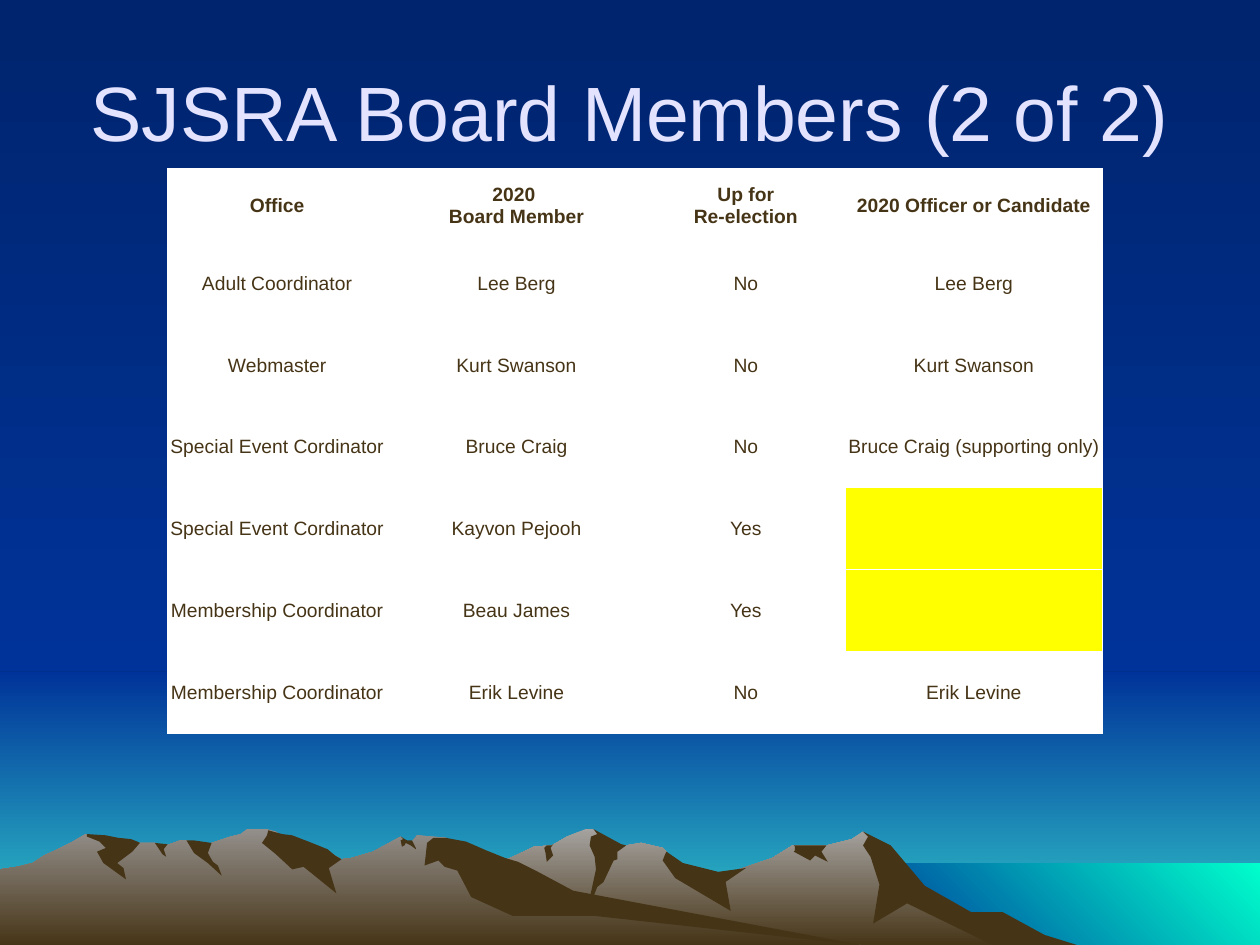
from copy import deepcopy

from lxml.etree import SubElement
from pptx import Presentation
from pptx.dml.color import RGBColor
from pptx.enum.shapes import MSO_SHAPE as Preset
from pptx.enum.text import MSO_ANCHOR as Anchor, PP_ALIGN as Align
from pptx.oxml.ns import qn
from pptx.util import Pt

PX = 9144
WIDTH, HEIGHT = 1000, 750
FONT = "Arial"
NAVY, BLUE, ROCK = "00246D", "003399", "463416"
WHITE, YELLOW, LAVENDER = "FFFFFF", "FFFF00", "E3E3FF"

TITLE = "SJSRA Board Members (2 of 2)"
TITLE_BOX = (50, 25, 900, 125)
TABLE_LEFT, TABLE_TOP = 133, 134
COLUMN_WIDTHS = (174, 206, 158, 204)
HEADER_HEIGHT, ROW_HEIGHT = 58, 65
ROWS = [
    ("Office", "2020 \nBoard Member", "Up for\nRe-election", "2020 Officer or Candidate"),
    ("Adult Coordinator", "Lee Berg", "No", "Lee Berg"),
    ("Webmaster", "Kurt Swanson", "No", "Kurt Swanson"),
    ("Special Event Cordinator", "Bruce Craig", "No", "Bruce Craig (supporting only)"),
    ("Special Event Cordinator", "Kayvon Pejooh", "Yes", ""),
    ("Membership Coordinator", "Beau James", "Yes", ""),
    ("Membership Coordinator", "Erik Levine", "No", "Erik Levine"),
]

BANDS = [
    ((0, 533, 1000, 217), (BLUE, "33CCCC"), 90),
    ((0, 0, 1000, 533), (NAVY, BLUE), 90),
    ((683, 685, 317, 65), (BLUE, "00FFCC"), 315),
]

RIGHT_RANGE = [
    (802, 740), (778, 727), (764, 723), (723, 698), (702, 671), (685, 660), (676, 666),
    (656, 671), (629, 671), (613, 681), (566, 697), (536, 690), (529, 676), (526, 673),
    (509, 669), (497, 671), (486, 673), (474, 661), (471, 658), (465, 658), (450, 664),
    (438, 671), (424, 672), (405, 681), (394, 685), (355, 698), (327, 709), (277, 739),
    (258, 751), (821, 751),
]
RIGHT_SHADOWS = [
    [(796, 724), (771, 724), (734, 703), (707, 671), (685, 660), (689, 664), (685, 671),
     (691, 680), (698, 702), (693, 733), (720, 717), (792, 752), (858, 751), (829, 742)],
    [(471, 658), (474, 662), (469, 664), (468, 671), (472, 680), (473, 690), (465, 727),
     (474, 704), (479, 700), (487, 683), (490, 682), (490, 676), (497, 671), (493, 670)],
    [(529, 676), (528, 678), (526, 683), (536, 697), (580, 723), (576, 700), (592, 689),
     (570, 692), (542, 685)],
    [(650, 671), (630, 671), (631, 672), (631, 675), (630, 676), (643, 683), (647, 679),
     (657, 684), (652, 676), (656, 671)],
    [(433, 677), (432, 673), (434, 671), (438, 671), (439, 670), (437, 673), (439, 679),
     (434, 684)],
]
LEFT_RANGE = [
    (690, 751), (667, 748), (432, 712), (354, 665), (331, 663), (327, 668), (323, 668),
    (318, 664), (296, 676), (279, 681), (271, 682), (260, 676), (236, 681), (223, 663),
    (219, 660), (212, 658), (196, 658), (191, 662), (183, 664), (168, 669), (160, 671),
    (148, 667), (143, 667), (132, 671), (128, 671), (123, 669), (111, 669), (94, 671),
    (68, 662), (56, 669), (46, 674), (35, 679), (26, 685), (14, 688), (0, 690), (0, 751),
]
LEFT_SHADOWS = [
    [(212, 663), (208, 669), (219, 678), (232, 690), (241, 688), (267, 709), (261, 689),
     (271, 682), (266, 679), (260, 674), (245, 668), (232, 663), (224, 662), (213, 659)],
    [(370, 668), (354, 665), (344, 665), (339, 669), (337, 687), (348, 683), (353, 688),
     (363, 691), (374, 712), (407, 727), (472, 727), (690, 751), (683, 750), (455, 707),
     (427, 692), (411, 684), (401, 681), (386, 675)],
    [(318, 667), (320, 666), (318, 664), (323, 667), (327, 667), (330, 673), (330, 674),
     (326, 671), (322, 669), (321, 671), (319, 672)],
    [(154, 667), (168, 669), (165, 677), (169, 684), (173, 687), (176, 695), (165, 685),
     (154, 677), (148, 667)],
    [(133, 670), (130, 674), (132, 680), (129, 678), (123, 669)],
    [(109, 668), (111, 669), (105, 676), (93, 685), (98, 689), (100, 698), (82, 685),
     (77, 676), (84, 673), (79, 668), (69, 664), (69, 662), (84, 663), (94, 665),
     (104, 666)],
]
RANGES = [
    (RIGHT_RANGE, "A5A29F", RIGHT_SHADOWS),
    (LEFT_RANGE, "938F8B", LEFT_SHADOWS),
]


def color(value):
    return RGBColor.from_string(value)


def set_solid(fill, value):
    fill.solid()
    fill.fore_color.rgb = color(value)


def set_gradient(fill, colors, angle):
    fill.gradient()
    fill.gradient_angle = 360 - angle
    for stop, value in zip(fill.gradient_stops, colors):
        stop.color.rgb = color(value)


def place(shape, box):
    shape.left, shape.top, shape.width, shape.height = (value * PX for value in box)


def write(paragraph, text, size, value, bold=False):
    paragraph.text = text
    paragraph.alignment = Align.CENTER
    for run in paragraph.runs:
        font = run.font
        font.name, font.size, font.bold = FONT, Pt(size), bold
        font.color.rgb = color(value)
    for line_break in paragraph._p.findall(qn("a:br")):
        line_break.append(deepcopy(paragraph.runs[0]._r.rPr))


def plain(shape):
    shape.shadow.inherit = False
    shape.line.fill.background()
    return shape


def add_outline(slide, points):
    builder = slide.shapes.build_freeform(*points[0], scale=PX)
    builder.add_line_segments(points[1:], close=True)
    return plain(builder.convert_to_shape())


def add_scenery(slide):
    set_gradient(slide.background.fill, (NAVY, BLUE), 90)
    for (left, top, width, height), colors, angle in BANDS:
        band = plain(slide.shapes.add_shape(
            Preset.RECTANGLE, left * PX, top * PX, width * PX, height * PX))
        set_gradient(band.fill, colors, angle)
    for outline, peak, shadows in RANGES:
        set_gradient(add_outline(slide, outline).fill, (peak, ROCK), 90)
        for shadow in shadows:
            set_solid(add_outline(slide, shadow).fill, ROCK)


def add_title(slide):
    title = slide.shapes.title
    place(title, TITLE_BOX)
    title.text_frame.vertical_anchor = Anchor.MIDDLE
    write(title.text_frame.paragraphs[0], TITLE, 44, LAVENDER)
    title._element.getparent().append(title._element)


def format_cell(cell, text, bold):
    cell.vertical_anchor = Anchor.MIDDLE
    cell.margin_left = cell.margin_top = cell.margin_right = PX
    cell.margin_bottom = 0
    if text:
        write(cell.text_frame.paragraphs[0], text, 11, ROCK, bold)
    properties = cell._tc.get_or_add_tcPr()
    for side in ("a:lnL", "a:lnR", "a:lnT", "a:lnB"):
        border = SubElement(properties, qn(side), w=str(Pt(1)))
        SubElement(SubElement(border, qn("a:solidFill")), qn("a:srgbClr"), val=WHITE)
    set_solid(cell.fill, WHITE if text else YELLOW)


def add_board_table(slide):
    heights = [HEADER_HEIGHT] + [ROW_HEIGHT] * (len(ROWS) - 1)
    table = slide.shapes.add_table(
        len(ROWS), len(COLUMN_WIDTHS), TABLE_LEFT * PX, TABLE_TOP * PX,
        sum(COLUMN_WIDTHS) * PX, sum(heights) * PX).table
    for column, width in zip(table.columns, COLUMN_WIDTHS):
        column.width = width * PX
    for index, (row, height) in enumerate(zip(table.rows, heights)):
        row.height = height * PX
        for cell, text in zip(row.cells, ROWS[index]):
            format_cell(cell, text, index == 0)


def main():
    presentation = Presentation()
    presentation.slide_width, presentation.slide_height = WIDTH * PX, HEIGHT * PX
    slide = presentation.slides.add_slide(presentation.slide_layouts[5])
    add_scenery(slide)
    add_title(slide)
    add_board_table(slide)
    presentation.save("out.pptx")


if __name__ == "__main__":
    main()
